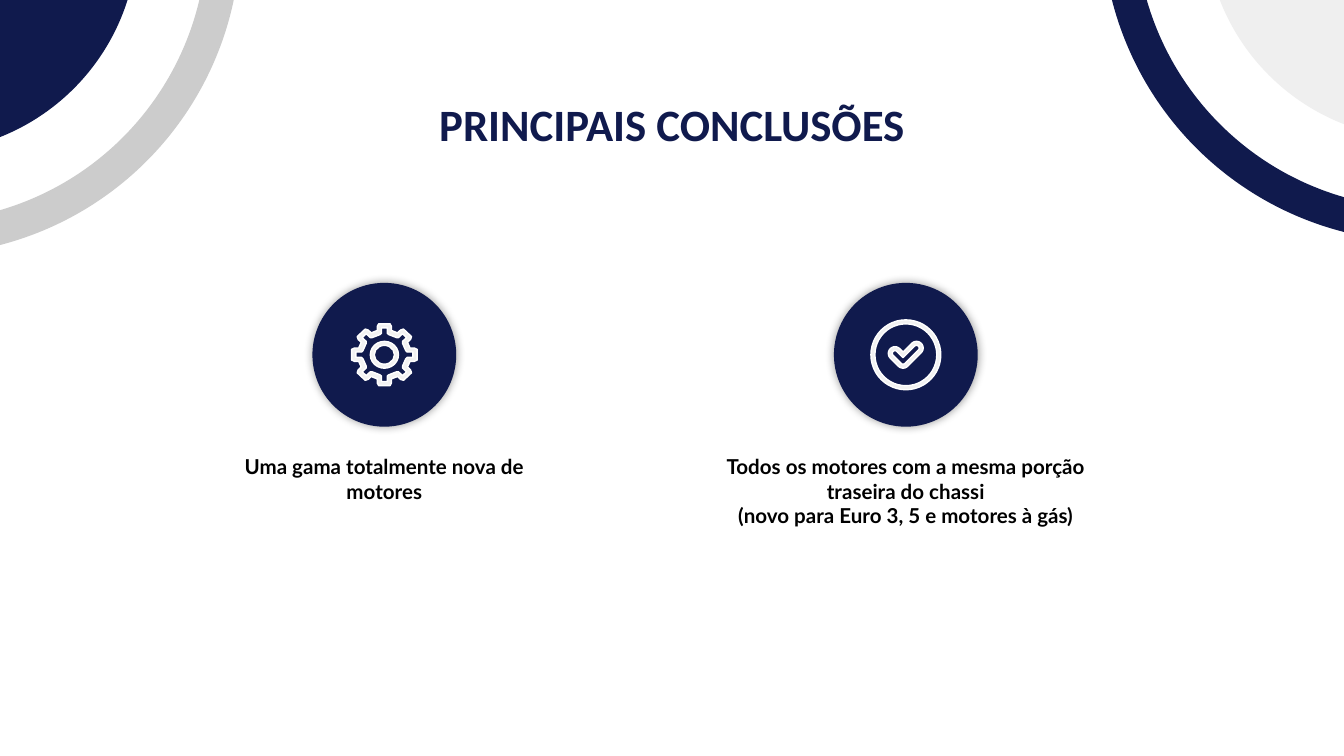
from math import cos, radians, sin, sqrt
from typing import NamedTuple, Optional

from lxml import etree
from pptx import Presentation
from pptx.dml.color import RGBColor
from pptx.enum.shapes import MSO_SHAPE as Preset
from pptx.enum.text import PP_ALIGN as Align
from pptx.oxml.ns import qn
from pptx.util import Inches, Pt

NAVY = RGBColor(0x10, 0x1A, 0x4D)
SILVER = RGBColor(0xCC, 0xCC, 0xCC)
PALE = RGBColor(0xEF, 0xEF, 0xEF)
ICON_FILL = RGBColor(0xF2, 0xF2, 0xF2)
WHITE = RGBColor(0xFF, 0xFF, 0xFF)
BLACK = RGBColor(0, 0, 0)

Points = list[tuple[float, float]]

ICON_Y = 2.64
CAPTION_TOP = 3.33
# Half a gear tooth as (distance from the hub, sideways offset)
TOOTH_OUTER = [(0.18, -0.05), (0.21, -0.05), (0.23, -0.04), (0.23, -0.02)]
TOOTH_INNER = [(0.15, -0.03), (0.16, -0.02), (0.2, -0.02)]


class Corner(NamedTuple):
    x: float
    y: float
    disc: RGBColor
    ring: RGBColor


class Caption(NamedTuple):
    x: float
    width: float
    height: float
    lines: list[str]


CORNERS = [Corner(-0.6, -0.49, NAVY, SILVER), Corner(10.59, -0.59, PALE, NAVY)]
GEAR_X, CHECK_X = 2.86, 6.74
CAPTIONS = [
    Caption(GEAR_X, 2.66, 0.71, ["Uma gama totalmente nova de motores"]),
    Caption(CHECK_X, 3.24, 0.84, [
        "Todos os motores com a mesma porção traseira do chassi",
        "(novo para Euro 3, 5 e motores à gás)",
    ]),
]


def paint(shape, fill: Optional[RGBColor], line: Optional[RGBColor], width: float = 0.75) -> None:
    shape.shadow.inherit = False
    if fill is None:
        shape.fill.background()
    else:
        shape.fill.solid()
        shape.fill.fore_color.rgb = fill
    if line is None:
        shape.line.fill.background()
    else:
        shape.line.color.rgb = line
        shape.line.width = Pt(width)


def add_round(page, preset: Preset, x: float, y: float, width: float, height: float):
    """Add a round preset centred on (x, y)."""
    return page.shapes.add_shape(preset, Inches(x - width / 2), Inches(y - height / 2),
                                 Inches(width), Inches(height))


def add_corner(page, corner: Corner) -> None:
    disc = add_round(page, Preset.OVAL, corner.x, corner.y, 3.25, 3.25)
    paint(disc, corner.disc, None)
    ring = add_round(page, Preset.OVAL, corner.x, corner.y, 4.53, 4.53)
    paint(ring, None, corner.ring, 18)


def add_badge(page, x: float) -> None:
    badge = add_round(page, Preset.OVAL, x, ICON_Y, 1.07, 1.07)
    paint(badge, NAVY, None)
    effects = badge.element.spPr.find(qn("a:effectLst"))
    shadow = etree.SubElement(effects, qn("a:outerShdw"), blurRad=str(Pt(5)), dist="0",
                              algn="ctr", rotWithShape="0")
    color = etree.SubElement(shadow, qn("a:srgbClr"), val="000000")
    etree.SubElement(color, qn("a:alpha"), val="40000")


def add_icon_ring(page, x: float, width: float, height: float) -> None:
    ring = add_round(page, Preset.DONUT, x, ICON_Y, width, height)
    ring.adjustments[0] = 0.03 / height
    paint(ring, ICON_FILL, WHITE)


def add_outline(page, contours: list[Points]) -> None:
    """Draw closed contours as one shape; the second is a hole in the first."""
    outer, inner = [[(Inches(x), Inches(y)) for x, y in points] for points in contours]
    builder = page.shapes.build_freeform(*outer[0])
    builder.add_line_segments(outer[1:])
    builder.move_to(*inner[0])
    builder.add_line_segments(inner[1:])
    paint(builder.convert_to_shape(), ICON_FILL, WHITE)


def gear_contour(x: float, half_tooth: Points) -> Points:
    tooth = half_tooth + [(reach, -side) for reach, side in reversed(half_tooth)]
    points = []
    for angle in (radians(45 * step) for step in range(8)):
        for reach, side in tooth:
            points.append((x + 1.06 * (reach * cos(angle) - side * sin(angle)),
                           ICON_Y + reach * sin(angle) + side * cos(angle)))
    return points


def arc(x: float, y: float, radius: float, start: int, stop: int) -> Points:
    return [(x + radius * cos(radians(angle)), y + radius * sin(radians(angle)))
            for angle in range(start, stop + 1, 15)]


def check_contour(x: float, y: float, radius: float) -> Points:
    """Trace a rounded tick at a distance from its arms, which meet at (x, y)."""
    return (arc(x - 0.06, y - 0.06, radius, 135, 315)
            + [(x, y - radius * sqrt(2))]
            + arc(x + 0.1, y - 0.1, radius, 225, 405)
            + arc(x, y, radius, 45, 135))


def add_text(page, x: float, top: float, width: float, height: float, lines: list[str],
             font: str, size: int, color: RGBColor):
    """Add centred bold lines in a box centred on x."""
    box = page.shapes.add_textbox(Inches(x - width / 2), Inches(top),
                                  Inches(width), Inches(height))
    frame = box.text_frame
    frame.word_wrap = True
    frame.text = "\n".join(lines)
    for para in frame.paragraphs:
        para.alignment = Align.CENTER
        para.font.name = font
        para.font.size = Pt(size)
        para.font.bold = True
        para.font.color.rgb = color
    return box


def main() -> None:
    deck = Presentation()
    deck.slide_width = Inches(10)
    deck.slide_height = deck.slide_width * 9 // 16
    page = deck.slides.add_slide(deck.slide_layouts[6])

    for corner in CORNERS:
        add_corner(page, corner)
    title = add_text(page, 5, 0.62, 8.43, 0.63, ["PRINCIPAIS CONCLUSÕES"], "Calibri", 24, NAVY)
    title.text_frame.margin_top = title.text_frame.margin_bottom = Inches(0.1)

    for x in (CHECK_X, GEAR_X):
        add_badge(page, x)
    for caption in CAPTIONS:
        add_text(page, caption.x, CAPTION_TOP, caption.width, caption.height,
                 caption.lines, "Lato", 11, BLACK)

    add_icon_ring(page, CHECK_X, 0.52, 0.52)
    add_outline(page, [check_contour(CHECK_X - 0.02, 2.69, radius) for radius in (0.05, 0.02)])
    add_outline(page, [gear_contour(GEAR_X, half) for half in (TOOTH_OUTER, TOOTH_INNER)])
    add_icon_ring(page, GEAR_X, 0.21, 0.2)
    deck.save("out.pptx")


if __name__ == "__main__":
    main()
